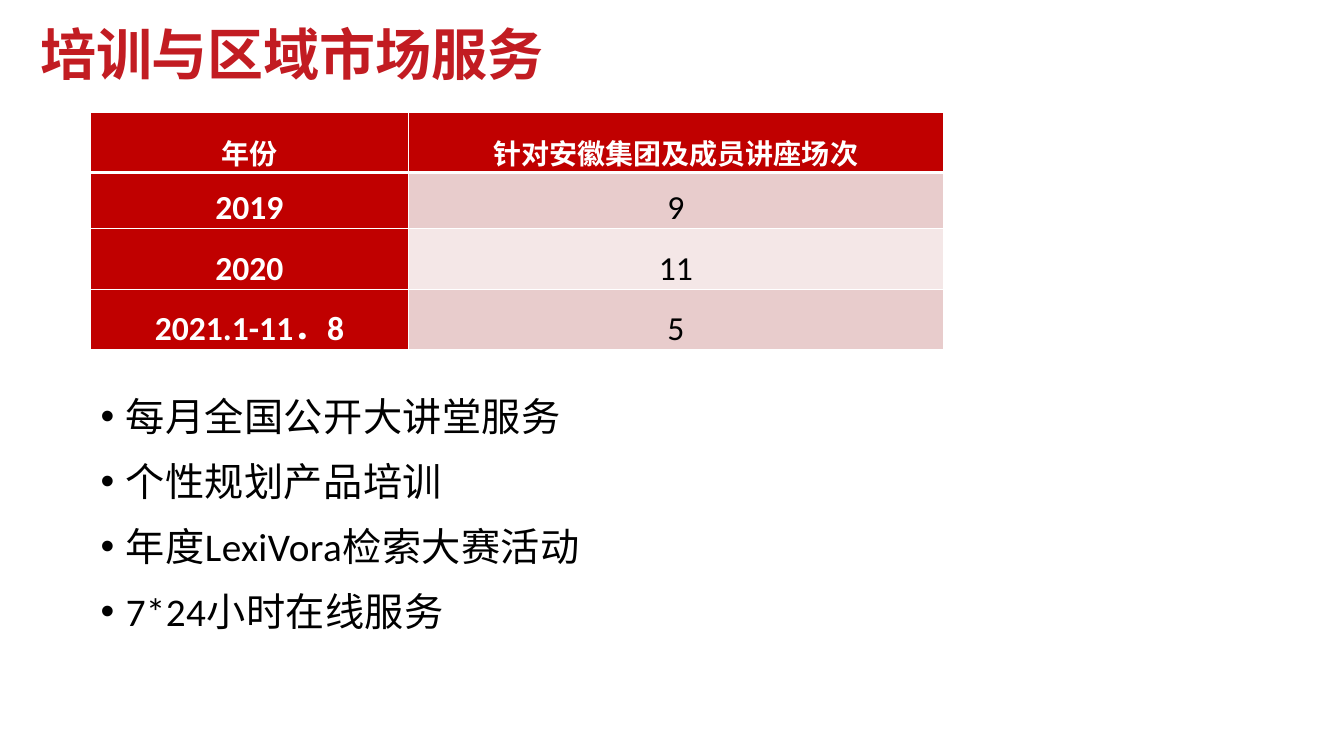
import pptx
import pptx.dml.color
import pptx.enum.text
import pptx.oxml
import pptx.oxml.ns
import pptx.util
from pptx.util import Pt

COLORS = {
    "title": "C21C22",
    "header": "C00000",
    "band": "E8CCCC",
    "light_band": "F4E7E7",
    "white": "FFFFFF",
    "black": "000000",
}
LATIN, CHINESE = "Calibri", "Noto Sans CJK SC"
ALIGN = pptx.enum.text.PP_ALIGN
ANCHOR = pptx.enum.text.MSO_ANCHOR

SESSIONS = [
    ("年份", "针对安徽集团及成员讲座场次"),
    ("2019", "9"),
    ("2020", "11"),
    ("2021.1-11．8", "5"),
]
SERVICES = [
    "每月全国公开大讲堂服务",
    "个性规划产品培训",
    "年度LexiVora检索大赛活动",
    "7*24小时在线服务",
]


def rgb(name):
    return pptx.dml.color.RGBColor.from_string(COLORS[name])


def add_xml(parent, tag, **attributes):
    child = pptx.oxml.parse_xml(f"<{tag} {pptx.oxml.ns.nsdecls('a')}/>")
    for key, value in attributes.items():
        child.set(key, str(value))
    parent.append(child)
    return child


def write(para, text, size, font=LATIN, color="black", bold=False,
          align=ALIGN.LEFT, line=1.0, after=0, tracking=0):
    para.alignment = align
    para.line_spacing = line
    para.space_after = Pt(after)
    span = para.add_run()
    span.text = text
    span.font.size = Pt(size)
    span.font.bold = bold
    span.font.name = font
    span.font.color.rgb = rgb(color)
    properties = span.font._element
    if font == CHINESE:
        add_xml(properties, "a:ea", typeface=font)
    if tracking:
        properties.set("spc", str(round(tracking * 100)))


def add_frame(page, left, top, width, height, anchor):
    frame = page.shapes.add_textbox(Pt(left), Pt(top), Pt(width), Pt(height)).text_frame
    frame.word_wrap = True
    frame.vertical_anchor = anchor
    return frame


def add_title(page, left, top, width, height):
    frame = add_frame(page, left, top, width, height, ANCHOR.MIDDLE)
    write(frame.paragraphs[0], "培训与区域市场服务", 40, font=CHINESE,
          color="title", bold=True, line=0.9)


def set_borders(cell, bottom):
    """Draw white cell edges, with the bottom one of the given width."""
    properties = cell._tc.get_or_add_tcPr()
    widths = {"a:lnL": 1, "a:lnR": 1, "a:lnT": 1, "a:lnB": bottom}
    for position, (tag, width) in enumerate(widths.items()):
        edge = add_xml(properties, tag, w=Pt(width))
        add_xml(add_xml(edge, "a:solidFill"), "a:srgbClr", val=COLORS["white"])
        properties.insert(position, edge)


def add_sessions_table(page, left, top, width, height):
    table = page.shapes.add_table(len(SESSIONS), 2, Pt(left), Pt(top),
                                  Pt(width), Pt(height)).table
    year_width = 226.8
    table.columns[0].width = Pt(year_width)
    table.columns[1].width = Pt(width - year_width)
    first_data_height = 40.3
    for row, texts in enumerate(SESSIONS):
        other_height = (height - first_data_height) / (len(SESSIONS) - 1)
        table.rows[row].height = Pt(first_data_height if row == 1 else other_height)
        for column, text in enumerate(texts):
            cell = table.cell(row, column)
            heading = row == 0 or column == 0
            band = "band" if row % 2 else "light_band"
            cell.fill.solid()
            cell.fill.fore_color.rgb = rgb("header" if heading else band)
            cell.vertical_anchor = ANCHOR.BOTTOM
            cell.margin_left = cell.margin_right = Pt(5)
            cell.margin_top = cell.margin_bottom = 0
            set_borders(cell, bottom=1 if row else 3)
            write(cell.text_frame.paragraphs[0], text, 24 if row else 20,
                  font=LATIN if row else CHINESE,
                  color="white" if heading else "black", bold=heading,
                  align=ALIGN.CENTER, line=1.07, after=8)


def add_services(page, left, top, width, height):
    frame = add_frame(page, left, top, width, height, ANCHOR.TOP)
    for index, service in enumerate(SERVICES):
        para = frame.add_paragraph() if index else frame.paragraphs[0]
        write(para, service, 28, line=1.2, after=6, tracking=0.3)
        properties = para._p.get_or_add_pPr()
        properties.set("marL", str(Pt(18)))
        properties.set("indent", str(Pt(-18)))
        add_xml(properties, "a:buFont", typeface="Arial")
        add_xml(properties, "a:buChar", char="•")


def main():
    deck = pptx.Presentation()
    deck.slide_width, deck.slide_height = Pt(960), Pt(540)
    page = deck.slides.add_slide(deck.slide_layouts[6])
    add_title(page, 21.6, 14.4, 864, 53.3)
    add_sessions_table(page, 64.8, 80, 609.1, 170)
    add_services(page, 64.8, 270, 702.7, 208)
    deck.save("out.pptx")


if __name__ == "__main__":
    main()
